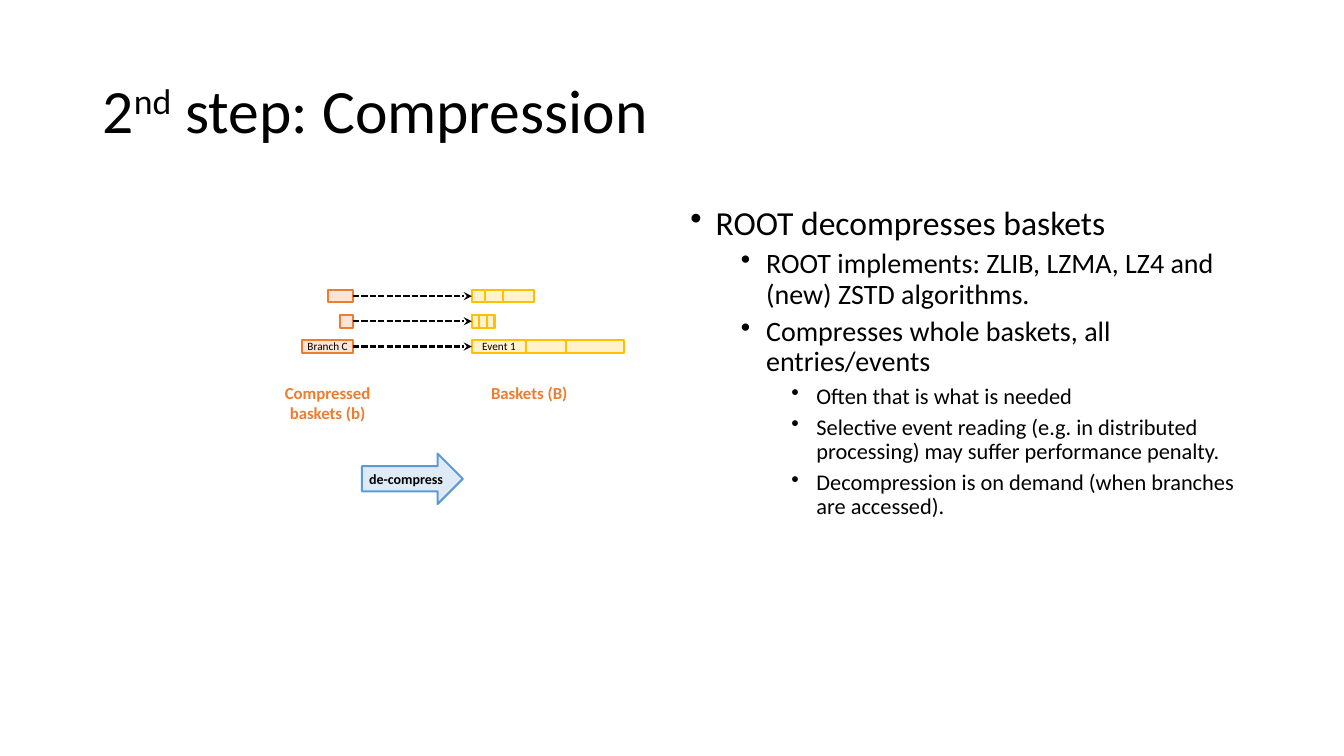
from dataclasses import dataclass

from lxml.etree import SubElement
from pptx import Presentation
from pptx.dml.color import RGBColor
from pptx.enum.dml import MSO_LINE
from pptx.enum.shapes import MSO_CONNECTOR, MSO_SHAPE
from pptx.enum.text import MSO_ANCHOR, PP_ALIGN
from pptx.oxml.ns import qn
from pptx.util import Inches, Pt


@dataclass(frozen=True)
class Theme:
    font: str = "Calibri"
    ink: str = "000000"
    accent: str = "ED7D31"
    compressed: tuple = ("FBE5D6", "ED7D31")
    basket: tuple = ("FFF2CC", "FFC000")
    step: tuple = ("DEEBF7", "5B9BD5")
    title_size: int = 44
    body_sizes: tuple = (24, 20, 16)
    caption_size: int = 12
    step_size: int = 10
    label_size: int = 8
    stroke: float = 1.5


CELL = 0.25
BAR_HEIGHT = 0.5
FIRST_ROW = 11.5
COMPRESSED_END = 14
BASKET_START = 18.72
BRANCHES = [
    (1, "", [0.52, 0.72, 1.24], ""),
    (0.5, "", [0.3, 0.3, 0.3], ""),
    (2, "Branch C", [2.16, 1.56, 2.32], "Event 1"),
]
POINTS = [
    (0, "ROOT decompresses baskets"),
    (1, "ROOT implements: ZLIB, LZMA, LZ4 and (new) ZSTD algorithms."),
    (1, "Compresses whole baskets, all entries/events"),
    (2, "Often that is what is needed"),
    (2, "Selective event reading (e.g. in distributed processing) may suffer performance penalty."),
    (2, "Decompression is on demand (when branches are accessed)."),
]


def grid(*cells):
    return [Inches(cell * CELL) for cell in cells]


def write(paragraph, words, size, font, color, bold=False, baseline=0, align=None):
    run = paragraph.add_run()
    run.text = words
    run.font.name = font
    run.font.size = Pt(size)
    run.font.bold = bold
    run.font.color.rgb = RGBColor.from_string(color)
    if baseline:
        run.font._element.set("baseline", str(baseline * 1000))
    if align is not None:
        paragraph.alignment = align


class SlideBuilder:
    """Draws styled elements on a slide measured in quarter-inch grid cells."""

    def __init__(self, slide, theme):
        self.slide = slide
        self.theme = theme

    def frame(self, area, anchor=MSO_ANCHOR.TOP, side=0.1):
        holder = self.slide.shapes.add_textbox(*grid(*area)).text_frame
        return self.prepare(holder, anchor, side)

    def prepare(self, holder, anchor, side):
        holder.word_wrap = True
        holder.vertical_anchor = anchor
        holder.margin_left = holder.margin_right = Inches(side)
        return holder

    def title(self, area, parts):
        heading = self.frame(area, MSO_ANCHOR.MIDDLE).paragraphs[0]
        heading.line_spacing = 0.9
        for words, baseline in parts:
            write(heading, words, self.theme.title_size, self.theme.font,
                  self.theme.ink, baseline=baseline)

    def bullets(self, area, points):
        body = self.frame(area)
        for index, (level, words) in enumerate(points):
            point = body.add_paragraph() if index else body.paragraphs[0]
            point.level = level
            point.line_spacing = 0.9
            point.space_before = Pt(5 if level else 10)
            write(point, words, self.theme.body_sizes[level], self.theme.font, self.theme.ink)
            properties = point._p.get_or_add_pPr()
            properties.set("marL", str(Inches(0.25 + 0.5 * level)))
            properties.set("indent", str(Inches(-0.25)))
            SubElement(properties, qn("a:buChar"), char="•")

    def caption(self, area, words, side=0.1):
        write(self.frame(area, side=side).paragraphs[0], words, self.theme.caption_size,
              self.theme.font, self.theme.accent, bold=True, align=PP_ALIGN.CENTER)

    def block(self, area, colors, words="", preset=MSO_SHAPE.RECTANGLE, side=0, **style):
        block = self.slide.shapes.add_shape(preset, *grid(*area))
        fill, outline = colors
        block.shadow.inherit = False
        block.fill.solid()
        block.fill.fore_color.rgb = RGBColor.from_string(fill)
        block.line.color.rgb = RGBColor.from_string(outline)
        block.line.width = Pt(self.theme.stroke)
        if words:
            label = self.prepare(block.text_frame, MSO_ANCHOR.MIDDLE, side).paragraphs[0]
            style = {"size": self.theme.label_size, **style}
            write(label, words, font=self.theme.font, color=self.theme.ink,
                  align=PP_ALIGN.CENTER, **style)

    def arrow(self, start, end, row):
        arrow = self.slide.shapes.add_connector(
            MSO_CONNECTOR.STRAIGHT, *grid(start, row, end, row))
        arrow.line.color.rgb = RGBColor.from_string(self.theme.ink)
        arrow.line.width = Pt(self.theme.stroke)
        arrow.line.dash_style = MSO_LINE.SQUARE_DOT
        properties = arrow._element.spPr
        SubElement(properties.find(qn("a:ln")), qn("a:tailEnd"), type="stealth")
        SubElement(properties, qn("a:effectLst"))

    def branch(self, row, packed, name, events, first_event):
        self.block((COMPRESSED_END - packed, row, packed, BAR_HEIGHT),
                   self.theme.compressed, name)
        for index, width in enumerate(events):
            left = BASKET_START + sum(events[:index])
            self.block((left, row, width, BAR_HEIGHT), self.theme.basket,
                       "" if index else first_event, side=0.1)
        self.arrow(COMPRESSED_END, BASKET_START, row + BAR_HEIGHT / 2)


def main():
    deck = Presentation()
    deck.slide_width, deck.slide_height = Inches(13.33), Inches(7.5)
    theme = Theme()
    builder = SlideBuilder(deck.slides.add_slide(deck.slide_layouts[6]), theme)
    builder.title((3.68, 1.6, 46, 5.8), [("2", 0), ("nd", 30), (" step: Compression", 0)])
    builder.bullets((27, 8, 22.68, 19.04), POINTS)
    for index, branch in enumerate(BRANCHES):
        builder.branch(FIRST_ROW + index, *branch)
    builder.caption((11, 15, 4, 2), "Compressed baskets (b)", side=0)
    builder.caption((19, 15, 4, 2), "Baskets (B)")
    builder.block((14.36, 18, 4, 2), theme.step, "de-compress", MSO_SHAPE.RIGHT_ARROW,
                  size=theme.step_size, bold=True)
    deck.save("out.pptx")


if __name__ == "__main__":
    main()
